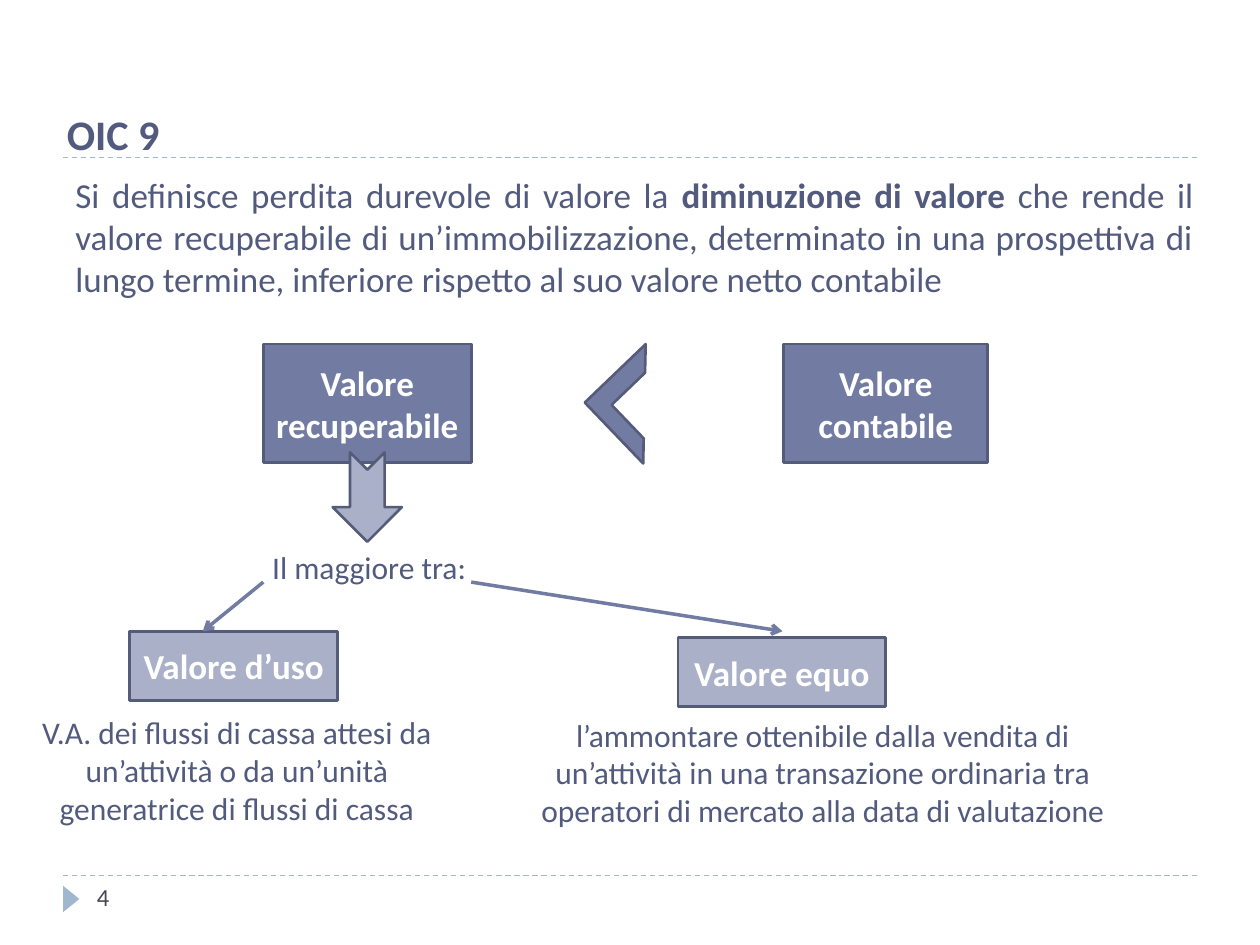
from lxml import etree
from pptx import Presentation, util as u
from pptx.dml.color import RGBColor
from pptx.enum import dml, shapes, text
from pptx.oxml.ns import qn

COLS, ROWS = 100, 75
WIDE, HIGH = u.Inches(10), u.Inches(7.5)
INK, DARK, LIGHT, EDGE, PALE = "525B7E", "727CA3", "AAB0C8", "545C79", "9FB8CD"
KIND = shapes.MSO_SHAPE
MID, LEFT = text.PP_ALIGN.CENTER, text.PP_ALIGN.LEFT


def color(code):
    """Turn a hex string into a colour."""
    return RGBColor.from_string(code)


def grid(*spans):
    """Turn alternating columns and rows into slide lengths."""
    units = (WIDE / COLS, HIGH / ROWS)
    return [u.Emu(round(span * units[i % 2])) for i, span in enumerate(spans)]


def write(shape, runs, size, code, align=LEFT, anchor=text.MSO_ANCHOR.TOP):
    """Fill a shape with one paragraph of (words, bold) runs."""
    frame = shape.text_frame
    frame.word_wrap = True
    frame.auto_size = text.MSO_AUTO_SIZE.NONE
    frame.vertical_anchor = anchor
    para = frame.paragraphs[0]
    para.alignment = align
    for words, bold in runs:
        run = para.add_run()
        run.text = words
        font = run.font
        font.name, font.size, font.bold = "Calibri", u.Pt(size), bold
        font.color.rgb = color(code)


def head(slide, words):
    """Place and format the title."""
    title = slide.shapes.title
    title.left, title.top, title.width, title.height = grid(4.3, 8.1, 89.1, 5)
    write(title, [(words, True)], 24, INK)


def note(slide, spot, runs, size=18, code=INK, align=MID):
    """Add a text box."""
    box = slide.shapes.add_textbox(*grid(*spot))
    write(box, runs, size, code, align)


def form(slide, kind, spot, fill, edge=EDGE, turn=0, adjust=()):
    """Add a filled preset shape."""
    item = slide.shapes.add_shape(kind, *grid(*spot))
    item.shadow.inherit = False
    item.rotation = turn
    item.fill.solid()
    item.fill.fore_color.rgb = color(fill)
    if edge:
        item.line.color.rgb = color(edge)
        item.line.width = u.Pt(1.5)
    else:
        item.line.fill.background()
    for i, value in enumerate(adjust):
        item.adjustments[i] = value
    return item


def block(slide, spot, words, fill):
    """Add a labelled rectangle."""
    item = form(slide, KIND.RECTANGLE, spot, fill)
    item.text_frame.margin_left = item.text_frame.margin_right = u.Inches(0.05)
    write(item, [(words, True)], 20, "FFFFFF", MID, text.MSO_ANCHOR.MIDDLE)


def link(slide, ends, code, width, dash=None, arrow=False):
    """Add a straight line, dashed or with an arrowhead."""
    line = slide.shapes.add_connector(shapes.MSO_CONNECTOR.STRAIGHT, *grid(*ends))
    line.line.color.rgb = color(code)
    line.line.width = u.Pt(width)
    if dash:
        line.line.dash_style = dash
    if arrow:
        etree.SubElement(line.line._get_or_add_ln(), qn("a:tailEnd"), type="arrow")
    etree.SubElement(line._element.spPr, qn("a:effectLst"))


def main():
    """Build the slide and save it."""
    deck = Presentation()
    deck.slide_width, deck.slide_height = WIDE, HIGH
    slide = deck.slides.add_slide(deck.slide_layouts[5])

    for row in (69.5, 12.5):
        link(slide, (5, row, 95, row), PALE, 0.75, dml.MSO_LINE.DASH)
    form(slide, KIND.ISOSCELES_TRIANGLE, (4.6, 70.7, 2.1, 1.3), PALE, None, 90)
    head(slide, "OIC 9")
    note(slide, (5, 13.3, 90.7, 58), [
        ("Si definisce perdita durevole di valore la ", False),
        ("diminuzione di valore ", True),
        ("che rende il valore recuperabile di un’immobilizzazione, determinato in "
         "una prospettiva di lungo termine, inferiore rispetto al suo valore netto "
         "contabile", False),
    ], 20, align=text.PP_ALIGN.JUSTIFY)

    for spot, words, fill in (
        ((20.9, 27.3, 16.5, 9.4), "Valore recuperabile", DARK),
        ((62.2, 27.3, 16.2, 9.4), "Valore contabile", DARK),
        ((10.3, 50.1, 16.5, 5.5), "Valore d’uso", LIGHT),
        ((53.8, 50.6, 16.5, 5.5), "Valore equo", LIGHT),
    ):
        block(slide, spot, words, fill)
    form(slide, KIND.HALF_FRAME, (47.8, 28.7, 6.7, 6.7), DARK,
         turn=316.2, adjust=(0.24, 0.21))
    form(slide, KIND.NOTCHED_RIGHT_ARROW, (25.6, 36.7, 7.1, 5.5), LIGHT, turn=90)

    for spot, words in (
        ((17.7, 43, 23.2, 4), "Il maggiore tra:"),
        ((0.7, 56.1, 36.2, 10.1), "V.A. dei flussi di cassa attesi da un’attività "
         "o da un’unità generatrice di flussi di cassa"),
        ((40.9, 56.3, 48.8, 10.1), "l’ammontare ottenibile dalla vendita di "
         "un’attività in una transazione ordinaria tra operatori di mercato alla "
         "data di valutazione"),
    ):
        note(slide, spot, [(words, False)])
    for ends in ((37.4, 46.2, 62.1, 50.1), (20.9, 46.2, 16.1, 50.1)):
        link(slide, ends, DARK, 2, arrow=True)
    note(slide, (6.7, 69.5, 21.7, 4), [("4", False)], 14, "464653", LEFT)
    deck.save("out.pptx")


if __name__ == "__main__":
    main()
